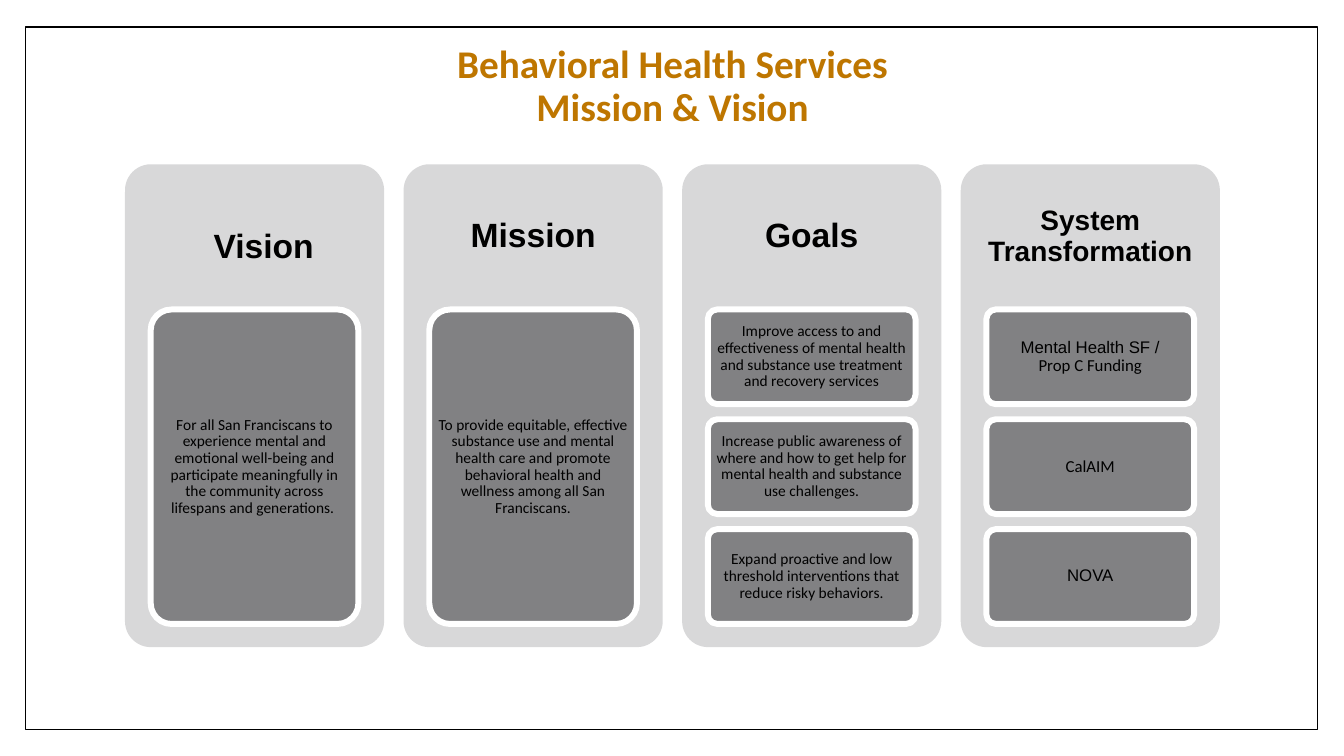
import pptx
import pptx.util
import pptx.dml.color
import pptx.enum.shapes
import pptx.enum.text

Inches, Pt = pptx.util.Inches, pptx.util.Pt
SHAPE = pptx.enum.shapes.MSO_SHAPE
COLORS = {"frame": "000000", "white": "FFFFFF", "title": "BE7600",
          "panel": "D8D8D9", "card": "818183", "text": "000000"}


def add_box(kind, left, top, width, height, fill, line=None, line_pt=1):
    sp = s.shapes.add_shape(kind, Inches(left), Inches(top), Inches(width), Inches(height))
    sp.shadow.inherit = False
    sp.fill.solid()
    sp.fill.fore_color.rgb = pptx.dml.color.RGBColor.from_string(COLORS[fill])
    if line:
        sp.line.color.rgb = pptx.dml.color.RGBColor.from_string(COLORS[line])
        sp.line.width = Pt(line_pt)
    else:
        sp.line.fill.background()
    if kind == SHAPE.ROUNDED_RECTANGLE:
        sp.adjustments[0] = 0.1
    return sp


def write(sp, text, font, size, margins, color="text", bold=False):
    tf = sp.text_frame
    tf.word_wrap = True
    tf.vertical_anchor = pptx.enum.text.MSO_ANCHOR.MIDDLE
    tf.margin_left = tf.margin_right = Inches(margins[0])
    tf.margin_top = tf.margin_bottom = Inches(margins[1])
    tf.text = text
    for p in tf.paragraphs:
        p.alignment = pptx.enum.text.PP_ALIGN.CENTER
        p.line_spacing = 0.9
        for r in p.runs:
            r.font.name = font
            r.font.size = Pt(size)
            r.font.bold = bold
            r.font.color.rgb = pptx.dml.color.RGBColor.from_string(COLORS[color])
    return tf


prs = pptx.Presentation()
prs.slide_width, prs.slide_height = Inches(13.33), Inches(7.5)
s = prs.slides.add_slide(prs.slide_layouts[6])

# Frame and title
add_box(SHAPE.RECTANGLE, 0.25, 0.27, 12.82, 6.97, "white", "frame")
title = s.shapes.add_textbox(Inches(0.92), Inches(0.14), Inches(11.5), Inches(1.45))
write(title, "Behavioral Health Services\vMission & Vision", "Calibri", 28,
      (0.1, 0.05), "title", True)

# Columns: heading, heading size, heading margin, card size, card margins, cards (text, font)
columns = [
    ("Vision", 24, 0.2, 11, (0.03, 0.02), [
        ("For all San Franciscans to experience mental and emotional well-being and "
         "participate meaningfully in the community across lifespans and generations. ",
         "Calibri")]),
    ("Mission", 24, 0.1, 11, (0.03, 0.02), [
        ("To provide equitable, effective substance use and mental health care and promote "
         "behavioral health and wellness among all San Franciscans.", "Calibri")]),
    ("Goals", 24, 0.1, 11, (0.03, 0.02), [
        ("Improve access to and effectiveness of mental health and substance use treatment "
         "and recovery services", "Calibri"),
        ("Increase public awareness of where and how to get help for mental health and "
         "substance use challenges.", "Calibri"),
        ("Expand proactive and low threshold interventions that reduce risky behaviors.",
         "Calibri")]),
    ("System Transformation", 20, 0.08, 12, (0.03, 0.03), [
        ("Mental Health SF /\nProp C Funding", "Arial"),
        ("CalAIM", "Calibri"),
        ("NOVA", "Arial")]),
]
panel_left, panel_top, panel_width, panel_pitch = 1.24, 1.63, 2.57, 2.763
cards_top, cards_height, card_width, card_gap = 3.07, 3.12, 2.06, 0.15

for i, (heading, size, margin, card_size, card_margins, cards) in enumerate(columns):
    left = panel_left + i * panel_pitch
    add_box(SHAPE.ROUNDED_RECTANGLE, left, panel_top, panel_width, 4.79, "panel")
    box = s.shapes.add_textbox(Inches(left), Inches(panel_top),
                               Inches(panel_width), Inches(1.44))
    tf = write(box, heading, "Arial", size, (margin, margin), bold=True)

    # A large leading space pushes the first heading right and down
    if heading == "Vision":
        p = tf.paragraphs[0]
        p.text = ""
        for text, run_size in ((" ", 47), (heading, size)):
            r = p.add_run()
            r.text = text
            r.font.name, r.font.size, r.font.bold = "Arial", Pt(run_size), True

    # Cards share the column height
    card_height = (cards_height - card_gap * (len(cards) - 1)) / len(cards)
    for j, (text, font) in enumerate(cards):
        card = add_box(SHAPE.ROUNDED_RECTANGLE, left + (panel_width - card_width) / 2,
                       cards_top + j * (card_height + card_gap), card_width, card_height,
                       "card", "white", 4.25)
        tf = write(card, text, font, card_size, card_margins)
        for p in tf.paragraphs[1:]:
            p.runs[0].font.name = "Calibri"

prs.save("out.pptx")
